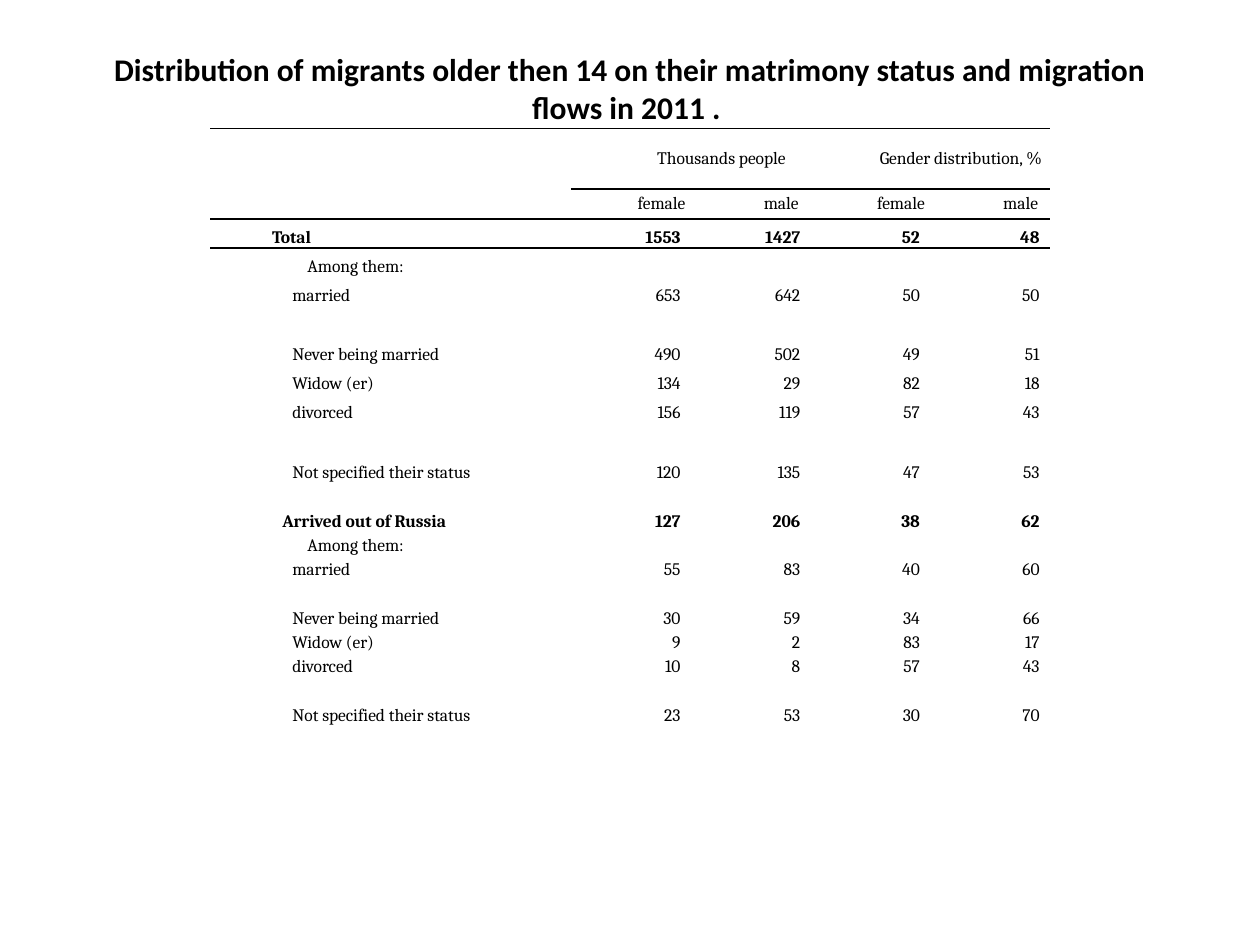
from lxml.etree import SubElement
from pptx import Presentation
from pptx.dml.color import RGBColor
from pptx.enum.text import MSO_ANCHOR, MSO_AUTO_SIZE, PP_ALIGN
from pptx.oxml.ns import qn
from pptx.util import Inches, Pt

BLACK = RGBColor(0, 0, 0)
NO_STYLE = "{2D5ABB26-0587-4C30-8999-92F81FD0307C}"
FIRST_LINE = 0.49
COLS = [2.86] + [0.95] * 4
TABLE_LEFT = (10 - sum(COLS)) / 2
HEADER = [["", "Thousands people", "", "Gender distribution, %", ""],
          ["", "female", "male", "female", "male"]]
STATUSES = ["married", "Never being married", "Widow (er)", "divorced",
            "Not specified their status"]
ALL_TOTAL = ("Total", 1553, 1427, 52, 48)
ALL_VALUES = [(653, 642, 50, 50), (490, 502, 49, 51), (134, 29, 82, 18),
              (156, 119, 57, 43), (120, 135, 47, 53)]
ARRIVED_TOTAL = ("Arrived out of Russia", 127, 206, 38, 62)
ARRIVED_VALUES = [(55, 83, 40, 60), (30, 59, 34, 66), (9, 2, 83, 17),
                  (10, 8, 57, 43), (23, 53, 30, 70)]


def add_run(p, text, size, font, bold=False):
    r = p.add_run()
    r.text = text
    r.font.size, r.font.name, r.font.bold = Pt(size), font, bold
    r.font.color.rgb = BLACK


def add_title(s, text, left, top, width, height):
    title = s.shapes.title
    title.left, title.top = Inches(left), Inches(top)
    title.width, title.height = Inches(width), Inches(height)
    tf = title.text_frame
    tf.word_wrap, tf.auto_size = True, MSO_AUTO_SIZE.NONE
    tf.vertical_anchor = MSO_ANCHOR.MIDDLE
    p = tf.paragraphs[0]
    p.alignment = PP_ALIGN.CENTER
    add_run(p, text, 18, "Calibri", True)


def add_grid(s, left, top, heights):
    """Place a plain table with no margins and small empty cells."""
    frame = s.shapes.add_table(len(heights), len(COLS), Inches(left), Inches(top),
                               Inches(sum(COLS)), Inches(sum(heights)))
    table = frame.table
    table.first_row = table.horz_banding = False
    frame._element.find(".//" + qn("a:tableStyleId")).text = NO_STYLE
    for column, width in zip(table.columns, COLS):
        column.width = Inches(width)
    for row, height in zip(table.rows, heights):
        row.height = Inches(height)
    for cell in table.iter_cells():
        cell.margin_left = cell.margin_right = 0
        cell.margin_top = cell.margin_bottom = 0
        cell.fill.background()
        SubElement(cell.text_frame.paragraphs[0]._p, qn("a:endParaRPr"), sz="1000")
    return table


def rule_cell(cell, *sides):
    """Draw black rules; border elements come before the cell fill."""
    tcPr = cell._tc.get_or_add_tcPr()
    for i, side in enumerate(sides):
        ln = SubElement(tcPr, qn("a:" + side), w=str(Pt(1)))
        fill = SubElement(ln, qn("a:solidFill"))
        SubElement(fill, qn("a:srgbClr"), val=str(BLACK))
        tcPr.insert(i, ln)


def indent(p, left, right=0):
    pPr = p._p.get_or_add_pPr()
    pPr.set("marL", str(Inches(left)))
    pPr.set("marR", str(Inches(right)))
    pPr.set("indent", str(Inches(FIRST_LINE)))


def fill_header(table):
    for r, row in enumerate(HEADER):
        for c, text in enumerate(row):
            cell = table.cell(r, c)
            rule_cell(cell, "lnT", "lnB")
            if text:
                cell.vertical_anchor = MSO_ANCHOR.MIDDLE
                p = cell.text_frame.paragraphs[0]
                p.alignment = PP_ALIGN.CENTER
                p.space_before = p.space_after = Pt(2)
                indent(p, 0)
                add_run(p, text, 10, "Cambria")
    for first, last in [((0, 0), (1, 0)), ((0, 1), (0, 2)), ((0, 3), (0, 4))]:
        table.cell(*first).merge(table.cell(*last))


def fill_body(table, first_row, total, total_indent, values):
    """Write a bold total row, the lead-in and one row per status."""
    rows = [(total_indent, total), (0.28, ("Among them:",))]
    rows += [(0.16, (name, *nums)) for name, nums in zip(STATUSES, values)]
    for r, (left, row) in enumerate(rows, first_row):
        for c, value in enumerate(row):
            cell = table.cell(r, c)
            cell.vertical_anchor = MSO_ANCHOR.BOTTOM
            p = cell.text_frame.paragraphs[0]
            p.alignment = PP_ALIGN.RIGHT if c else PP_ALIGN.LEFT
            p.line_spacing, p.space_before = Pt(7), Pt(5.5)
            indent(p, 0 if c else left, 0.08 if c else 0)
            add_run(p, str(value), 10, "Cambria", row is total)


def body_heights(total, single, double):
    return [total, single, single, double, single, single, double]


def main():
    prs = Presentation()
    prs.slide_width, prs.slide_height = Inches(10), Inches(7.5)
    s = prs.slides.add_slide(prs.slide_layouts[5])

    # Title
    add_title(s, "Distribution of migrants older then 14 on their matrimony status "
                 "and migration flows in 2011 . ", 0.5, 0.3, 9, 0.79)

    # All migrants
    table = add_grid(s, TABLE_LEFT, 1.02,
                     [0.48, 0.24] + body_heights(0.23, 0.23, 0.47))
    fill_header(table)
    for c in range(len(COLS)):
        rule_cell(table.cell(2, c), "lnT")
    fill_body(table, 2, ALL_TOTAL, 0, ALL_VALUES)

    # Arrivals from abroad
    table = add_grid(s, TABLE_LEFT, 3.98, body_heights(0.24, 0.19, 0.39))
    fill_body(table, 0, ARRIVED_TOTAL, 0.08, ARRIVED_VALUES)

    prs.save("out.pptx")


if __name__ == "__main__":
    main()
